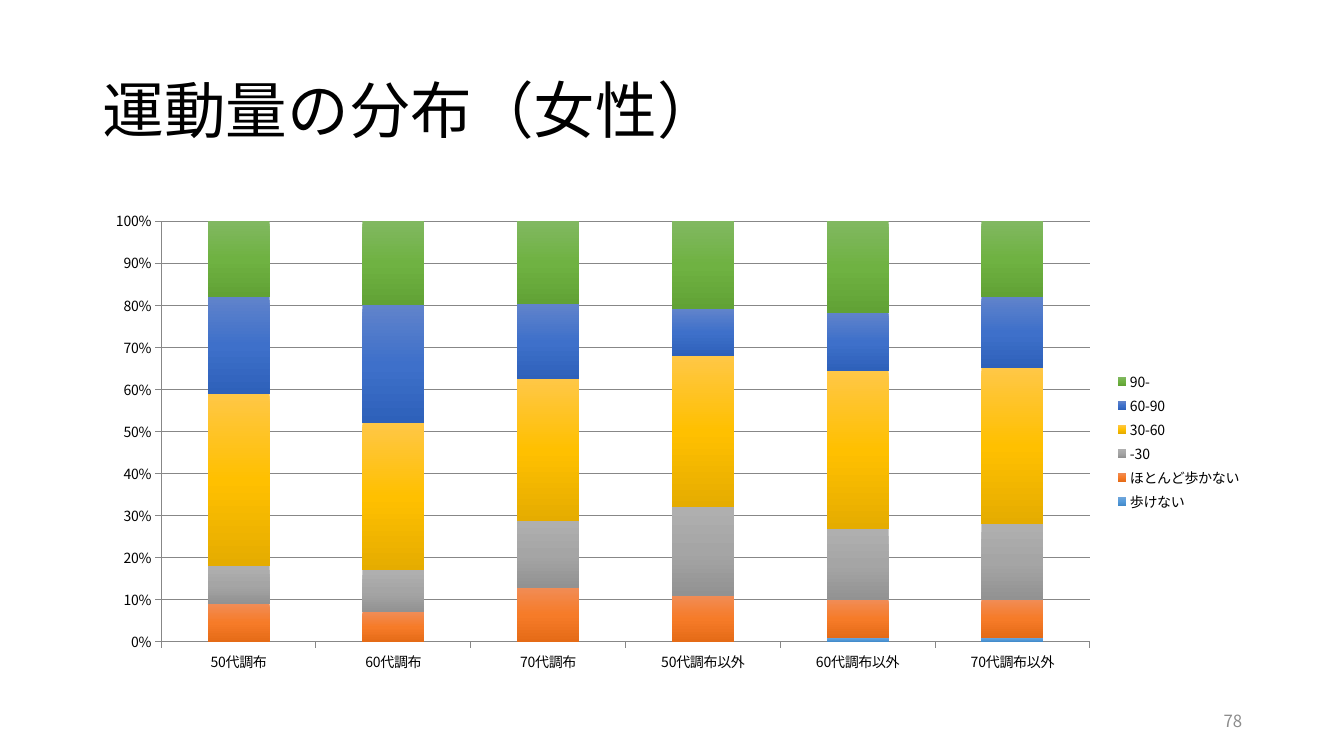
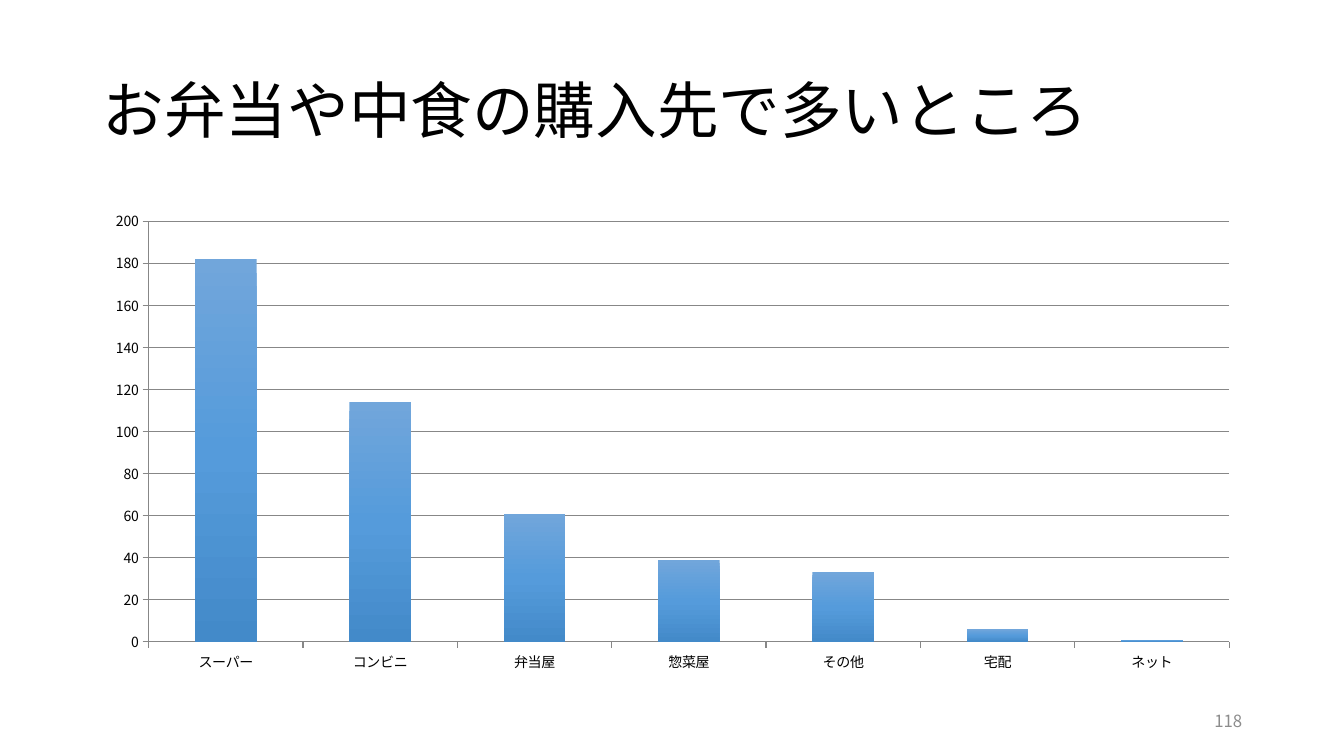
from dataclasses import dataclass

import pptx
import pptx.chart.data
import pptx.dml.color
import pptx.enum.chart
import pptx.enum.text
import pptx.oxml
import pptx.oxml.ns
import pptx.util

FONT = "Noto Sans CJK JP"
BLACK, FOOTER_GRAY, LINE_GRAY = "000000", "8C8C8C", "878787"
SLIDE_WIDTH, SLIDE_HEIGHT = 13.33, 7.5
MARGIN = 0.92
CONTENT_WIDTH = 11.5
NUMBER_WIDTH = 3

# Top, middle and bottom colour of each bar gradient
BLUE = ("71A6DB", "559BDB", "438AC9")
ORANGE = ("F18C55", "F67B28", "E56B17")
GRAY = ("AFAFAF", "A5A5A5", "929292")
YELLOW = ("FFC746", "FFC000", "E5AC00")
INDIGO = ("6083CB", "3E70CA", "2E61BA")
GREEN = ("81B861", "6FB242", "61A235")

CHART_TYPE = pptx.enum.chart.XL_CHART_TYPE
ALIGN = pptx.enum.text.PP_ALIGN


@dataclass(frozen=True)
class Box:
    left: float
    top: float
    width: float
    height: float

    def inches(self) -> tuple:
        sides = (self.left, self.top, self.width, self.height)
        return tuple(pptx.util.Inches(side) for side in sides)


@dataclass(frozen=True)
class Series:
    name: str
    values: tuple[int, ...]
    gradient: tuple[str, str, str]


@dataclass(frozen=True)
class ChartPage:
    title: str
    number: int
    kind: CHART_TYPE
    categories: tuple[str, ...]
    series: tuple[Series, ...]
    axis_top: float
    axis_step: float
    number_format: str
    overlap: int = 0
    legend: bool = False


TITLE_BOX = Box(MARGIN, 0.4, CONTENT_WIDTH, 1.45)
CHART_BOX = Box(MARGIN, 2, CONTENT_WIDTH, 4.76)
NUMBER_BOX = Box(MARGIN + CONTENT_WIDTH - NUMBER_WIDTH, 6.95, NUMBER_WIDTH, 0.4)

PAGES = (
    ChartPage(
        title="運動量の分布（女性）",
        number=78,
        kind=CHART_TYPE.COLUMN_STACKED_100,
        categories=("50代調布", "60代調布", "70代調布",
                    "50代調布以外", "60代調布以外", "70代調布以外"),
        series=(
            Series("歩けない", (0, 0, 0, 0, 1, 1), BLUE),
            Series("ほとんど歩かない", (9, 7, 13, 11, 9, 9), ORANGE),
            Series("-30", (9, 10, 16, 21, 17, 18), GRAY),
            Series("30-60", (41, 35, 34, 36, 38, 37), YELLOW),
            Series("60-90", (23, 28, 18, 11, 14, 17), INDIGO),
            Series("90-", (18, 20, 20, 21, 22, 18), GREEN),
        ),
        axis_top=1,
        axis_step=0.1,
        number_format="0%",
        overlap=100,
        legend=True,
    ),
    ChartPage(
        title="お弁当や中食の購入先で多いところ",
        number=118,
        kind=CHART_TYPE.COLUMN_CLUSTERED,
        categories=("スーパー", "コンビニ", "弁当屋", "惣菜屋", "その他", "宅配", "ネット"),
        series=(Series("Series 1", (182, 114, 61, 39, 33, 6, 1), BLUE),),
        axis_top=200,
        axis_step=20,
        number_format="General",
    ),
)


def color(code: str) -> pptx.dml.color.RGBColor:
    return pptx.dml.color.RGBColor.from_string(code)


def style_font(font, size: float, code: str) -> None:
    """Set size, colour and the typeface for both Latin and East Asian text."""
    font.size = pptx.util.Pt(size)
    font.color.rgb = color(code)
    font.name = FONT
    latin = font._element.find(pptx.oxml.ns.qn("a:latin")) if hasattr(font, "_element") \
        else font._rPr.find(pptx.oxml.ns.qn("a:latin"))
    latin.addnext(pptx.oxml.parse_xml(
        f'<a:ea {pptx.oxml.ns.nsdecls("a")} typeface="{FONT}"/>'))


def add_text(page, box: Box, text: str, size: float, code: str,
             align: ALIGN = ALIGN.LEFT, spacing: float = 1.0) -> None:
    frame = page.shapes.add_textbox(*box.inches()).text_frame
    frame.word_wrap = True
    frame.vertical_anchor = pptx.enum.text.MSO_ANCHOR.MIDDLE
    para = frame.paragraphs[0]
    para.text = text
    para.alignment = align
    para.line_spacing = spacing
    style_font(para.font, size, code)


def fill_gradient(series, gradient: tuple[str, str, str]) -> None:
    """Shade the bars from top to bottom through three colours."""
    stops = "".join(
        f'<a:gs pos="{place}"><a:srgbClr val="{code}"/></a:gs>'
        for place, code in zip((0, 50000, 100000), gradient))
    series.format.fill.background()
    blank = series._element.spPr.find(pptx.oxml.ns.qn("a:noFill"))
    blank.getparent().replace(blank, pptx.oxml.parse_xml(
        f'<a:gradFill {pptx.oxml.ns.nsdecls("a")} rotWithShape="1">'
        f'<a:gsLst>{stops}</a:gsLst><a:lin ang="5400000" scaled="0"/></a:gradFill>'))


def style_line(line) -> None:
    line.color.rgb = color(LINE_GRAY)
    line.width = pptx.util.Pt(0.75)


def add_column_chart(page, content: ChartPage) -> None:
    data = pptx.chart.data.CategoryChartData()
    data.categories = content.categories
    for item in content.series:
        data.add_series(item.name, item.values)
    chart = page.shapes.add_chart(content.kind, *CHART_BOX.inches(), data).chart
    style_font(chart.font, 10, BLACK)
    chart.has_title = False
    chart.has_legend = content.legend
    if content.legend:
        chart.legend.position = pptx.enum.chart.XL_LEGEND_POSITION.RIGHT
        chart.legend.include_in_layout = False

    plot = chart.plots[0]
    plot.vary_by_categories = False
    plot.gap_width = 150
    plot.overlap = content.overlap
    for series, item in zip(plot.series, content.series):
        fill_gradient(series, item.gradient)

    values = chart.value_axis
    values.minimum_scale = 0
    values.maximum_scale = content.axis_top
    values.major_unit = content.axis_step
    values.has_major_gridlines = True
    style_line(values.major_gridlines.format.line)
    values.tick_labels.number_format = content.number_format
    values.tick_labels.number_format_is_linked = False
    for axis in (values, chart.category_axis):
        axis.major_tick_mark = pptx.enum.chart.XL_TICK_MARK.OUTSIDE
        axis.minor_tick_mark = pptx.enum.chart.XL_TICK_MARK.NONE
        style_line(axis.format.line)


def add_chart_page(deck, content: ChartPage) -> None:
    page = deck.slides.add_slide(deck.slide_layouts[6])
    add_text(page, TITLE_BOX, content.title, 44, BLACK, spacing=0.9)
    add_text(page, NUMBER_BOX, str(content.number), 12, FOOTER_GRAY, ALIGN.RIGHT)
    add_column_chart(page, content)


def main() -> None:
    deck = pptx.Presentation()
    deck.slide_width = pptx.util.Inches(SLIDE_WIDTH)
    deck.slide_height = pptx.util.Inches(SLIDE_HEIGHT)
    for content in PAGES:
        add_chart_page(deck, content)
    deck.save("out.pptx")


if __name__ == "__main__":
    main()
